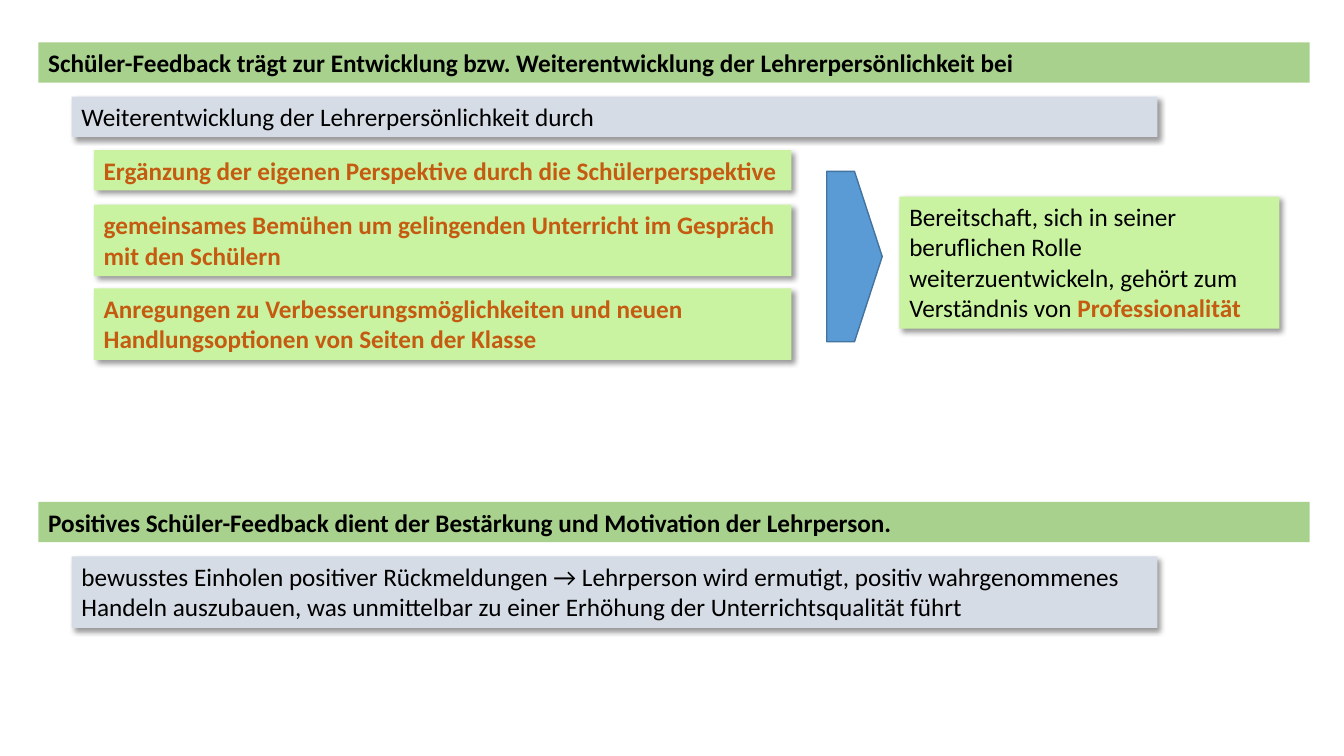
from dataclasses import dataclass

from lxml.etree import SubElement
from pptx import Presentation
from pptx.dml.color import RGBColor
from pptx.enum.shapes import MSO_SHAPE as Shape
from pptx.enum.text import MSO_ANCHOR as Anchor, MSO_AUTO_SIZE as AutoSize
from pptx.oxml.ns import qn
from pptx.slide import Slide
from pptx.util import Inches, Pt

BLACK = RGBColor(0x00, 0x00, 0x00)
ORANGE = RGBColor(0xC5, 0x5A, 0x11)
GREEN = RGBColor(0xA9, 0xD1, 0x8E)
LIME = RGBColor(0xCA, 0xF3, 0xA1)
GREY = RGBColor(0xD6, 0xDC, 0xE5)
BLUE = RGBColor(0x5B, 0x9B, 0xD5)
DARK_BLUE = RGBColor(0x43, 0x73, 0x9E)

HEIGHTS = {1: 0.4, 2: 0.71, 4: 1.31}
STEPS = {1: 0.54, 2: 0.83}


@dataclass(frozen=True)
class Style:
    left: float
    width: float
    fill: RGBColor
    color: RGBColor = BLACK
    bold: bool = False
    shadow: bool = True


@dataclass(frozen=True)
class Box:
    text: str
    style: Style
    lines: int = 1


HEADING = Style(0.38, 12.61, GREEN, bold=True, shadow=False)
STATEMENT = Style(0.71, 10.77, GREY)
ARGUMENT = Style(0.93, 6.92, LIME, color=ORANGE, bold=True)
CONCLUSION = Style(8.92, 3.77, LIME)

STACKS = [
    (0.42, [
        Box("Schüler-Feedback trägt zur Entwicklung bzw. Weiterentwicklung "
            "der Lehrerpersönlichkeit bei", HEADING),
        Box("Weiterentwicklung der Lehrerpersönlichkeit durch", STATEMENT),
    ]),
    (1.49, [
        Box("Ergänzung der eigenen Perspektive durch die Schülerperspektive", ARGUMENT),
        Box("gemeinsames Bemühen um gelingenden Unterricht im Gespräch "
            "mit den Schülern", ARGUMENT, 2),
        Box("Anregungen zu Verbesserungsmöglichkeiten und neuen "
            "Handlungsoptionen von Seiten der Klasse", ARGUMENT, 2),
    ]),
    (4.98, [
        Box("Positives Schüler-Feedback dient der Bestärkung und Motivation "
            "der Lehrperson.", HEADING),
        Box("bewusstes Einholen positiver Rückmeldungen → Lehrperson wird ermutigt, "
            "positiv wahrgenommenes Handeln auszubauen, was unmittelbar zu einer "
            "Erhöhung der Unterrichtsqualität führt", STATEMENT, 2),
    ]),
]


def add_run(p, text: str, *, color: RGBColor = BLACK, bold: bool = False) -> None:
    r = p.add_run()
    r.text = text
    r.font.name = "Calibri"
    r.font.size = Pt(18)
    r.font.color.rgb = color
    r.font.bold = bold


def add_shadow(sp) -> None:
    sp.shadow.inherit = False
    effects = sp._element.spPr.find(qn("a:effectLst"))
    outer = SubElement(effects, qn("a:outerShdw"), blurRad=str(Pt(4)), dist=str(Pt(3)),
                       dir=str(45 * 60000), algn="tl", rotWithShape="0")
    color = SubElement(outer, qn("a:srgbClr"), val=str(BLACK))
    SubElement(color, qn("a:alpha"), val="40000")


def add_box(s: Slide, box: Box, top: float):
    style = box.style
    sp = s.shapes.add_textbox(Inches(style.left), Inches(top), Inches(style.width),
                              Inches(HEIGHTS[box.lines]))
    sp.fill.solid()
    sp.fill.fore_color.rgb = style.fill
    if style.shadow:
        add_shadow(sp)
    tf = sp.text_frame
    tf.word_wrap = True
    tf.auto_size = AutoSize.SHAPE_TO_FIT_TEXT
    tf.vertical_anchor = Anchor.TOP
    p = tf.paragraphs[0]
    add_run(p, box.text, color=style.color, bold=style.bold)
    return p


def add_stack(s: Slide, top: float, boxes: list[Box]) -> None:
    for box in boxes:
        add_box(s, box, top)
        top += STEPS[box.lines]


def add_arrow(s: Slide) -> None:
    sp = s.shapes.add_shape(Shape.PENTAGON, Inches(8.2), Inches(1.7), Inches(0.55), Inches(1.69))
    sp.shadow.inherit = False
    sp.fill.solid()
    sp.fill.fore_color.rgb = BLUE
    sp.line.color.rgb = DARK_BLUE
    sp.line.width = Pt(1)


def main() -> None:
    prs = Presentation()
    prs.slide_width, prs.slide_height = Inches(13.33), Inches(7.5)
    s = prs.slides.add_slide(prs.slide_layouts[6])
    for top, boxes in STACKS:
        add_stack(s, top, boxes)
    add_arrow(s)
    p = add_box(s, Box("Bereitschaft, sich in seiner beruflichen Rolle weiterzuentwickeln, "
                       "gehört zum Verständnis von ", CONCLUSION, 4), 1.95)
    add_run(p, "Professionalität", color=ORANGE, bold=True)
    prs.save("out.pptx")


if __name__ == "__main__":
    main()
